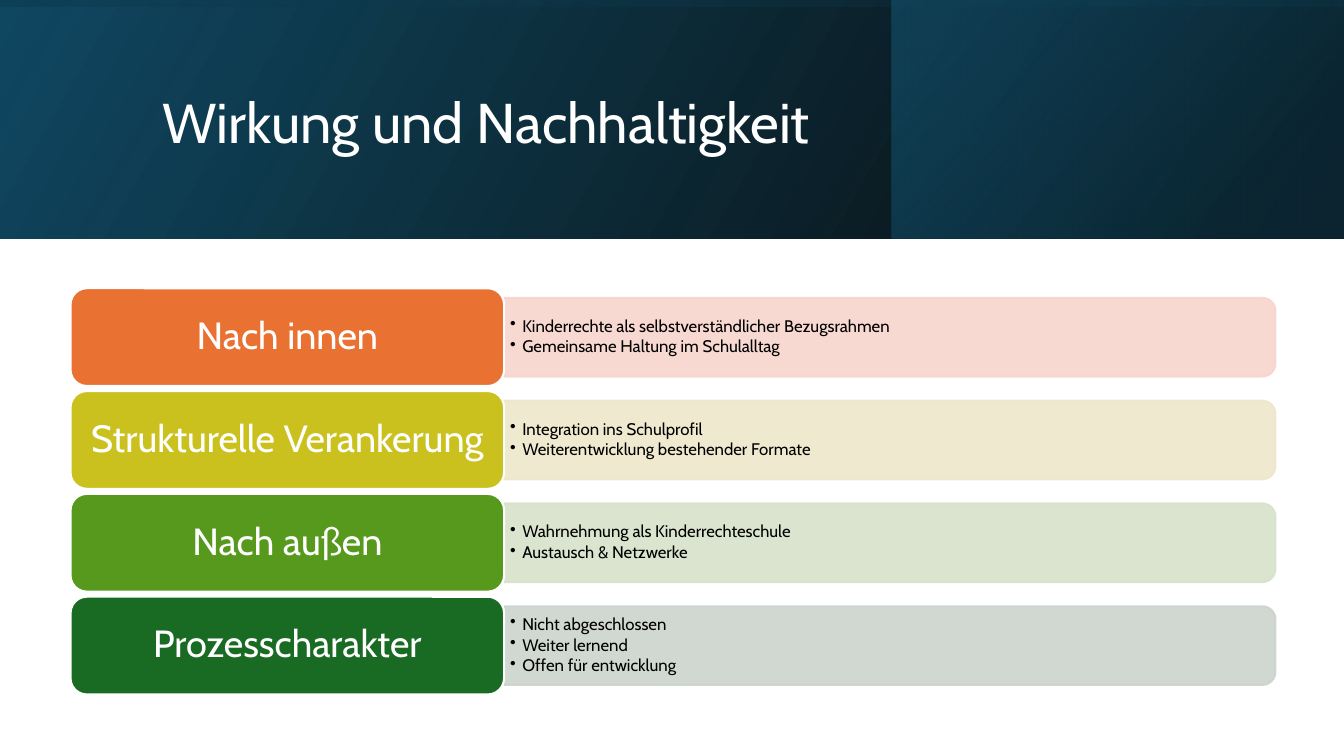
from lxml import etree
from pptx import Presentation
from pptx import util as u
from pptx.dml.color import RGBColor
from pptx.enum import shapes, text
from pptx.oxml.ns import qn


def paint(color, value, alpha=100):
    color.rgb = RGBColor.from_string(value)
    if alpha < 100:
        node = color._xFill.find(qn("a:srgbClr")) if hasattr(color, "_xFill") else color._color._xClr
        etree.SubElement(node, qn("a:alpha")).set("val", str(alpha * 1000))


def write(box, lines, size, color, align=text.PP_ALIGN.LEFT, after=0, insets=(0.1, 0.05), bullet=False):
    frame = box.text_frame
    frame.word_wrap = True
    frame.auto_size = text.MSO_AUTO_SIZE.NONE
    frame.vertical_anchor = text.MSO_ANCHOR.MIDDLE
    frame.margin_left = frame.margin_right = u.Inches(insets[0])
    frame.margin_top = frame.margin_bottom = u.Inches(insets[1])
    for index, line in enumerate(lines):
        para = frame.add_paragraph() if index else frame.paragraphs[0]
        para.alignment = align
        para.line_spacing = 0.9
        para.space_before = u.Pt(0)
        para.space_after = u.Pt(after)
        if bullet:
            props = para._p.get_or_add_pPr()
            props.set("marL", str(u.Inches(0.12)))
            props.set("indent", str(-u.Inches(0.12)))
            etree.SubElement(props, qn("a:buChar")).set("char", "•")
        span = para.add_run()
        span.text = line
        span.font.name = "Cabin"
        span.font.size = u.Pt(size)
        span.font.fill.solid()
        paint(span.font.fill.fore_color, color)


deck = Presentation()
deck.slide_width = u.Inches(13.33)
deck.slide_height = u.Inches(7.5)
page = deck.slides.add_slide(deck.slide_layouts[5])

bands = [
    ((0, 0, 13.33, 2.37), 0, 30, [(0, "000000", 96), (1, "104862", 100)]),
    ((8.84, 0, 4.49, 2.37), 0, 40, [(0.19, "0B3041", 68), (1, "156082", 48)]),
    ((5.48, -5.48, 2.37, 13.33), 270, 10, [(0.23, "104862", 16), (0.99, "000000", 45)]),
]
for place, turn, angle, stops in bands:
    band = page.shapes.add_shape(shapes.MSO_SHAPE.RECTANGLE, *map(u.Inches, place))
    band.shadow.inherit = False
    band.line.fill.background()
    band.rotation = turn
    band._element.spPr.find(qn("a:xfrm")).set("flipH", "1")
    band.fill.gradient()
    band.fill.gradient_angle = angle
    for stop, (position, value, alpha) in zip(band.fill.gradient_stops, stops):
        stop.position = position
        paint(stop.color, value, alpha)

title = page.shapes.title
title.left, title.top, title.width, title.height = map(u.Inches, (1.51, 0.38, 10.63, 1.72))
write(title, ["Wirkung und Nachhaltigkeit"], 40, "FFFFFF")
page.shapes._spTree.append(title._element)

topics = [
    ("Nach innen", "E97132", "F7D5CE",
     ["Kinderrechte als selbstverständlicher Bezugsrahmen", "Gemeinsame Haltung im Schulalltag"]),
    ("Strukturelle Verankerung", "CBC11E", "EEE7CB",
     ["Integration ins Schulprofil", "Weiterentwicklung bestehender Formate"]),
    ("Nach außen", "56991D", "D8E2CA",
     ["Wahrnehmung als Kinderrechteschule", "Austausch & Netzwerke"]),
    ("Prozesscharakter", "196B24", "CCD4CD",
     ["Nicht abgeschlossen", "Weiter lernend", "Offen für entwicklung"]),
]
left, first_top, pitch = 0.7, 2.86, 1.02
label_width, label_height = 4.3, 0.97
bar_width, bar_height = 7.65, 0.78
bar_left = left + label_width

for row, (label, strong, pale, points) in enumerate(topics):
    top = first_top + row * pitch
    middle = top + label_height / 2
    bar = page.shapes.add_shape(
        shapes.MSO_SHAPE.ROUND_2_SAME_RECTANGLE,
        u.Inches(bar_left + (bar_width - bar_height) / 2), u.Inches(middle - bar_width / 2),
        u.Inches(bar_height), u.Inches(bar_width))
    bar.rotation = 90
    card = page.shapes.add_shape(
        shapes.MSO_SHAPE.ROUNDED_RECTANGLE,
        u.Inches(left), u.Inches(top), u.Inches(label_width), u.Inches(label_height))
    for shape, fill, line, alpha in ((bar, pale, pale, 90), (card, strong, "FFFFFF", 100)):
        shape.shadow.inherit = False
        shape.fill.solid()
        paint(shape.fill.fore_color, fill, alpha)
        shape.line.width = u.Pt(1.5)
        shape.line.fill.solid()
        paint(shape.line.fill.fore_color, line, alpha)
    write(card, [label], 27, "FFFFFF", align=text.PP_ALIGN.CENTER, insets=(0.11, 0.06))
    box = page.shapes.add_textbox(
        u.Inches(bar_left + 0.01), u.Inches(middle - 0.35), u.Inches(7.61), u.Inches(0.7))
    write(box, points, 12, "000000", after=1.8, insets=(0.05, 0.03), bullet=True)

deck.save("out.pptx")
